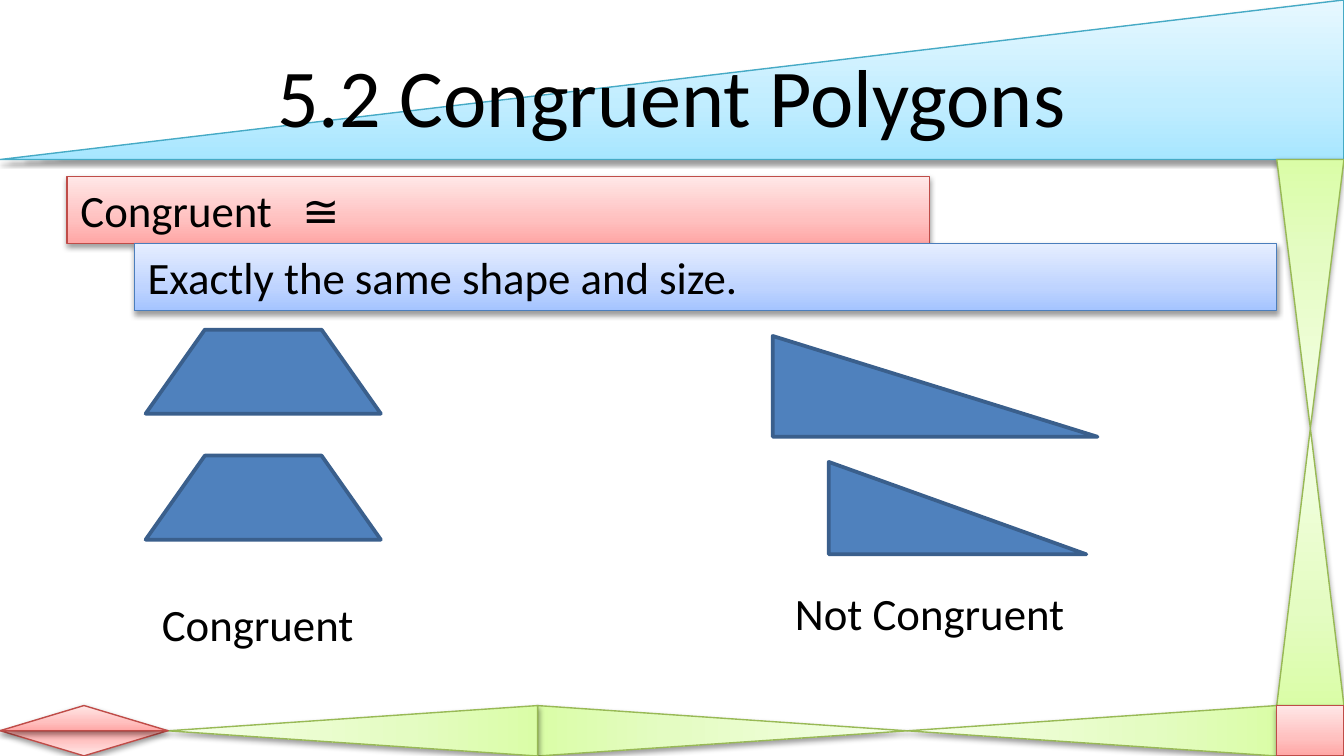
from dataclasses import dataclass

from lxml import etree
from pptx import Presentation
from pptx.dml.color import RGBColor
from pptx.enum.shapes import MSO_SHAPE
from pptx.enum.text import MSO_ANCHOR, PP_ALIGN
from pptx.oxml import parse_xml
from pptx.oxml.ns import qn
from pptx.util import Inches, Pt

RECT, TRI = MSO_SHAPE.RECTANGLE, MSO_SHAPE.ISOSCELES_TRIANGLE
RIGHT, TRAP = MSO_SHAPE.RIGHT_TRIANGLE, MSO_SHAPE.TRAPEZOID
LEFT, MID = PP_ALIGN.LEFT, PP_ALIGN.CENTER
TOP, CENTRE = MSO_ANCHOR.TOP, MSO_ANCHOR.MIDDLE

WIDE, HIGH = Inches(10), Inches(5.625)
COLS, ROWS = 120, 90
NS = 'xmlns:a="http://schemas.openxmlformats.org/drawingml/2006/main"'

# Gradient stops at 0, 35 and 100 %, then the line colour
AQUA = ("A7E6FF", "C1EDFF", "E7F8FF", "46AAC5")
GREEN = ("DAFDA7", "E4FCC2", "F5FFE7", "98B955")
RED = ("FFA6A5", "FFC0BF", "FFE7E7", "BF4C48")
BLUE = ("A4C4FF", "BFD4FF", "E6EEFF", "4B7EBC")


@dataclass
class Box:
    """A place on the grid, in columns and rows."""
    col: float
    row: float
    wide: float
    high: float

    def area(self) -> tuple:
        return (round(WIDE * self.col / COLS), round(HIGH * self.row / ROWS),
                round(WIDE * self.wide / COLS), round(HIGH * self.high / ROWS))


@dataclass
class Panel:
    """A shape with a gradient and a soft shadow."""
    kind: int
    box: Box
    tone: tuple
    flip: str = ""
    turn: int = 0
    text: str = ""


@dataclass
class Solid:
    """A plain polygon of the lesson."""
    kind: int
    box: Box


@dataclass
class Label:
    text: str
    box: Box
    size: int = 24
    anchor: int = TOP


def color(code: str) -> RGBColor:
    return RGBColor.from_string(code)


def write(shape, text: str, align: int, size: int = 24, anchor: int = TOP) -> None:
    frame = shape.text_frame
    para = frame.paragraphs[0]
    run = para.add_run()
    run.text = text
    for item, form in (
        (frame, {"word_wrap": True, "vertical_anchor": anchor}),
        (para, {"alignment": align}),
        (run.font, {"name": "Calibri", "size": Pt(size)}),
    ):
        for key, value in form.items():
            setattr(item, key, value)
    run.font.color.rgb = color("000000")
    if "\t" in text:
        tabs = etree.SubElement(para._p.get_or_add_pPr(), qn("a:tabLst"))
        etree.SubElement(tabs, qn("a:tab"), pos=str(Inches(1.65)), algn="l")


def outline(shape, code: str, width: float) -> None:
    shape.line.color.rgb = color(code)
    shape.line.width = Pt(width)


def draw_panel(shapes, part: Panel) -> None:
    shape = shapes.add_shape(part.kind, *part.box.area())
    shape.rotation = part.turn
    *tones, edge = part.tone
    outline(shape, edge, 0.75)
    props = shape._element.spPr
    if part.flip:
        props.find(qn("a:xfrm")).set("flip" + part.flip, "1")
    stops = "".join(f'<a:gs pos="{pos}"><a:srgbClr val="{tone}"/></a:gs>'
                    for pos, tone in zip((0, 35000, 100000), tones))
    fill = parse_xml(f'<a:gradFill {NS} rotWithShape="1"><a:gsLst>{stops}</a:gsLst>'
                     '<a:lin ang="16200000" scaled="1"/></a:gradFill>')
    props.find(qn("a:ln")).addprevious(fill)
    props.append(parse_xml(
        f'<a:effectLst {NS}><a:outerShdw blurRad="{Pt(3.1)}" dist="{Pt(1.6)}" '
        'dir="5400000" rotWithShape="0"><a:srgbClr val="000000">'
        '<a:alpha val="38000"/></a:srgbClr></a:outerShdw></a:effectLst>'))
    if part.text:
        write(shape, part.text, LEFT)


def draw_solid(shapes, part: Solid) -> None:
    shape = shapes.add_shape(part.kind, *part.box.area())
    shape.shadow.inherit = False
    shape.fill.solid()
    shape.fill.fore_color.rgb = color("4F81BD")
    outline(shape, "3A5F8C", 2)
    if part.kind == TRAP:
        shape.adjustments[0] = 0.705


def draw_label(shapes, part: Label) -> None:
    shape = shapes.add_textbox(*part.box.area())
    write(shape, part.text, MID, part.size, part.anchor)


# Frame: header wedge, right column, bottom row and corners
FRAME = [
    Panel(RIGHT, Box(0, 0, 120, 19), AQUA, "H"),
    Panel(TRI, Box(114, 19, 6, 32), GREEN, "V"),
    Panel(TRI, Box(114, 51, 6, 33), GREEN),
    *(Panel(TRI, Box(95.25 - 33 * i, 65, 4.5, 44), GREEN, flip, turn)
      for i, (flip, turn) in enumerate([("", 270), ("H", 90), ("", 270)])),
    Panel(RECT, Box(114, 84, 6, 6), RED),
    Panel(TRI, Box(0, 87, 15, 3), RED, "V"),
    Panel(TRI, Box(0, 84, 15, 3), RED),
]
# Term and its meaning
TERMS = [
    Panel(RECT, Box(6, 21, 77, 8), RED, text="Congruent\t≅"),
    Panel(RECT, Box(12, 29, 102, 8), BLUE, text="Exactly the same shape and size."),
]
# Equal pair on the left, unequal pair on the right
PAIRS = [
    *(Solid(TRAP, Box(13, row, 21, 10)) for row in (39.25, 54.25)),
    Solid(RIGHT, Box(69, 40, 29, 12)),
    Solid(RIGHT, Box(74, 55, 23, 11)),
]
TITLE = Label("5.2 Congruent Polygons", Box(0, 3.75, 120, 15), 44, CENTRE)
NAMES = [
    Label("Congruent", Box(7, 70.25, 32, 8)),
    Label("Not Congruent", Box(67, 69, 32, 8)),
]
DRAW = {Panel: draw_panel, Solid: draw_solid, Label: draw_label}


def main() -> None:
    deck = Presentation()
    deck.slide_width, deck.slide_height = WIDE, HIGH
    slide = deck.slides.add_slide(deck.slide_layouts[6])
    for part in [*FRAME, TITLE, *TERMS, *PAIRS, *NAMES]:
        DRAW[type(part)](slide.shapes, part)
    deck.save("out.pptx")


if __name__ == "__main__":
    main()
